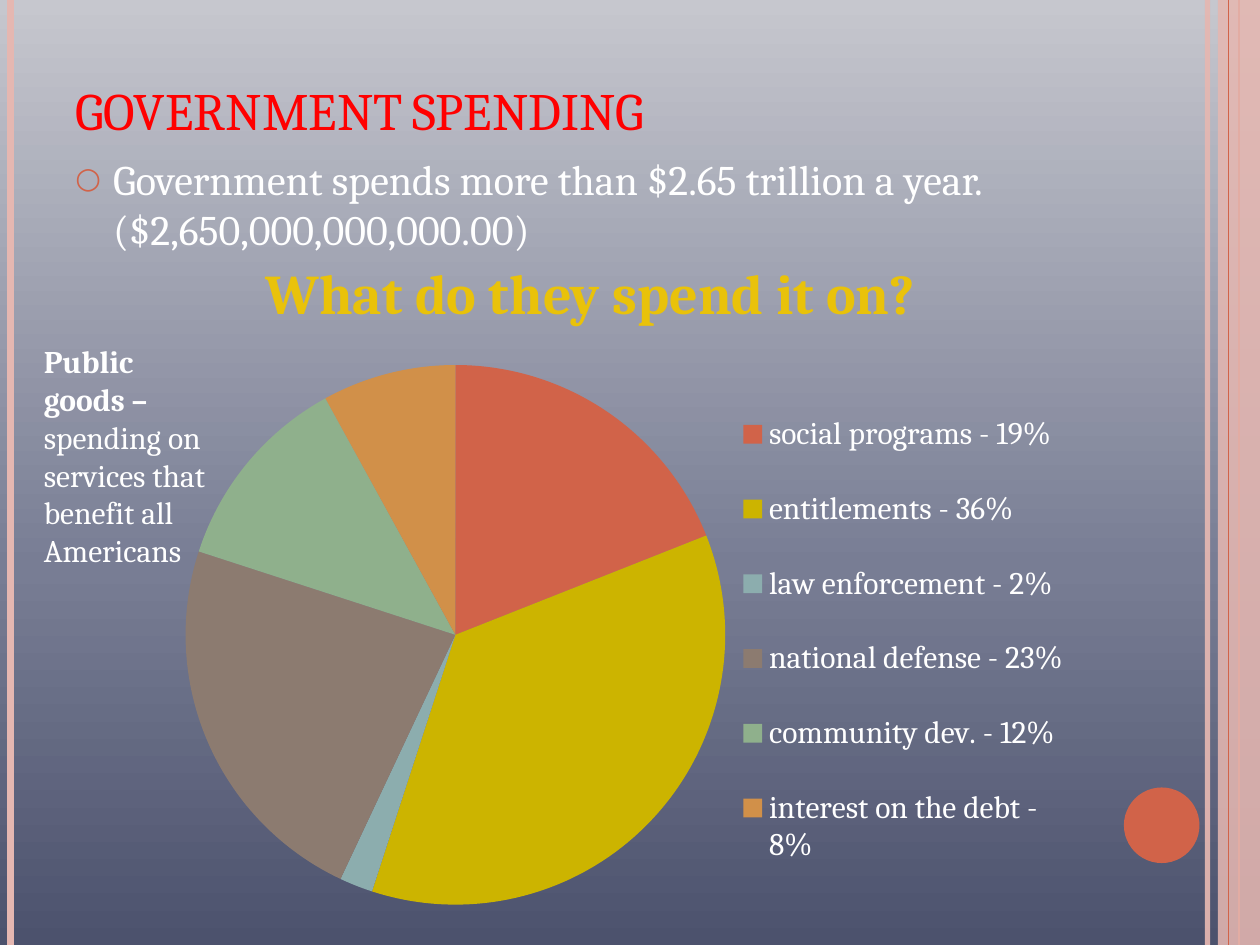
import pptx
import pptx.chart.data
import pptx.dml.color
import pptx.enum.chart
import pptx.enum.shapes
import pptx.enum.text
import pptx.oxml
import pptx.oxml.ns
import pptx.util

Pt = pptx.util.Pt
RGB = pptx.dml.color.RGBColor
Align = pptx.enum.text.PP_ALIGN
Fit = pptx.enum.text.MSO_AUTO_SIZE
Kind = pptx.enum.shapes.MSO_SHAPE

FONT = "Cambria"
WHITE = RGB(0xFF, 0xFF, 0xFF)
RED = RGB(0xFF, 0x00, 0x00)
GOLD = RGB(0xE9, 0xC2, 0x0A)
RUST = RGB(0xD1, 0x63, 0x49)
PINK = RGB(0xE5, 0xB7, 0xB1)
OLIVE = RGB(0xCC, 0xB4, 0x00)
TEAL = RGB(0x8C, 0xAD, 0xAE)
BROWN = RGB(0x8C, 0x7B, 0x70)
GREEN = RGB(0x8F, 0xB0, 0x8C)
AMBER = RGB(0xD1, 0x90, 0x49)

SKY = [(0, RGB(0x4C, 0x52, 0x6D)), (40, RGB(0x78, 0x7D, 0x94)),
       (100, RGB(0xC6, 0xC7, 0xCE))]
SHINE = [(0, RGB(0xFF, 0xE2, 0x75)), (75, GOLD), (100, RGB(0x97, 0x85, 0x00))]

WIDE, HIGH = 720, 540
TITLE = "GOVERNMENT SPENDING"
FACT = "Government spends more than $2.65 trillion a year. ($2,650,000,000,000.00)"
ASK = "What do they spend it on?"
GOODS = [("Public goods – ", True),
         ("spending on services that benefit all Americans", False)]
SHARES = [
    ("social programs", 19, RUST),
    ("entitlements", 36, OLIVE),
    ("law enforcement", 2, TEAL),
    ("national defense", 23, BROWN),
    ("community dev.", 12, GREEN),
    ("interest on the debt", 8, AMBER),
]
# left, top, width, height on the slide
CHART = (96, 186, 522, 354)
PIE = (106, 208.6, 308.4, 308.4)
KEY = (424, 216, 187, 299)
# x, width, colour, opacity in percent
RULES = [(690, 3, PINK, 93), (6, 4.5, PINK, 100), (708, 1.5, RUST, 100)]
EDGE = (702, 0.75, RUST, 100)


def pts(*nums):
    return [Pt(n) for n in nums]


def node(text):
    """Parse XML whose root tag carries the {ns} mark."""
    return pptx.oxml.parse_xml(text.replace("{ns}", pptx.oxml.ns.nsdecls("a", "c")))


def fade(solid, stops, angle):
    """Replace a solid fill element by a linear gradient."""
    marks = "".join(f'<a:gs pos="{at * 1000}"><a:srgbClr val="{tint}"/></a:gs>'
                    for at, tint in stops)
    solid.getparent().replace(solid, node(
        f'<a:gradFill {{ns}} rotWithShape="1"><a:gsLst>{marks}</a:gsLst>'
        f'<a:lin ang="{angle * 60000}" scaled="0"/></a:gradFill>'))


def veil(shape, part):
    """Set the opacity of a shape's colour."""
    for tint in shape.element.xpath("./p:spPr//a:srgbClr"):
        tint.append(node(f'<a:alpha {{ns}} val="{part * 1000}"/>'))


def add_rule(slide, x, width, color, part):
    rule = slide.shapes.add_connector(
        pptx.enum.shapes.MSO_CONNECTOR.STRAIGHT, *pts(x, 0, x, HIGH))
    rule.line.color.rgb = color
    rule.line.width = Pt(width)
    rule.element.spPr.append(node("<a:effectLst {ns}/>"))
    if part < 100:
        veil(rule, part)


def add_solid(slide, kind, box, color):
    shape = slide.shapes.add_shape(kind, *pts(*box))
    shape.shadow.inherit = False
    shape.fill.solid()
    shape.fill.fore_color.rgb = color
    shape.line.fill.background()
    return shape


def add_run(para, text, size, color, bold=False):
    run = para.add_run()
    run.text = text
    font = run.font
    font.name, font.size, font.bold = FONT, Pt(size), bold
    font.color.rgb = color
    return run


def add_text(slide, box, wrap=True, fit=Fit.NONE):
    frame = slide.shapes.add_textbox(*pts(*box)).text_frame
    frame.word_wrap = wrap
    frame.auto_size = fit
    return frame.paragraphs[0]


def add_frame(slide):
    """Background and the trim along both sides."""
    slide.background.fill.solid()
    fade(slide.element.xpath(".//p:bgPr/a:solidFill")[0], SKY, 270)
    for rule in RULES:
        add_rule(slide, *rule)
    veil(add_solid(slide, Kind.RECTANGLE, (696, 0, 24, HIGH), PINK), 87)
    add_rule(slide, *EDGE)
    add_solid(slide, Kind.OVAL, (642.25, 450, 43.2, 43.2), RUST)


def add_title(slide):
    title = slide.shapes.title
    title.left, title.top, title.width, title.height = pts(36, 21.6, 588, 62.6)
    frame = title.text_frame
    frame.vertical_anchor = pptx.enum.text.MSO_ANCHOR.BOTTOM
    para = frame.paragraphs[0]
    para.alignment = Align.LEFT
    run = add_run(para, TITLE, 30, RED)
    run._r.get_or_add_rPr().set("cap", "small")


def add_fact(slide):
    para = add_text(slide, (36, 84.2, 588, 425.5))
    para.space_before = Pt(6)
    add_run(para, FACT, 24, WHITE)
    props = para._p.get_or_add_pPr()
    props.set("marL", str(Pt(21.6)))
    props.set("indent", str(Pt(-21.6)))
    for mark in (f'<a:buClr {{ns}}><a:srgbClr val="{RUST}"/></a:buClr>',
                 '<a:buSzPct {ns} val="70000"/>',
                 f'<a:buFont {{ns}} typeface="{FONT}"/>',
                 '<a:buChar {ns} char="○"/>'):
        props.append(node(mark))


def layout(box, target=""):
    """Manual chart layout for a box given in slide points."""
    left, top, width, height = CHART
    parts = {"x": (box[0] - left) / width, "y": (box[1] - top) / height,
             "w": box[2] / width, "h": box[3] / height}
    modes = '<c:xMode val="edge"/><c:yMode val="edge"/>'
    sizes = "".join(f'<c:{key} val="{val:.4f}"/>' for key, val in parts.items())
    return node(f"<c:layout {{ns}}><c:manualLayout>{target}{modes}{sizes}"
                "</c:manualLayout></c:layout>")


def add_pie(slide):
    data = pptx.chart.data.CategoryChartData()
    data.categories = [f"{name} - {share}%" for name, share, _ in SHARES]
    data.add_series("Series 1", [share for _, share, _ in SHARES])
    chart = slide.shapes.add_chart(
        pptx.enum.chart.XL_CHART_TYPE.PIE, *pts(*CHART), data).chart
    chart.has_title = False
    chart.font.name, chart.font.size = FONT, Pt(18)
    chart.font.color.rgb = WHITE
    chart.has_legend = True
    chart.legend.position = pptx.enum.chart.XL_LEGEND_POSITION.RIGHT
    chart.legend.include_in_layout = False
    plot = chart.plots[0]
    plot.vary_by_categories = True
    for i, (_, _, color) in enumerate(SHARES):
        fill = plot.series[0].points[i].format.fill
        fill.solid()
        fill.fore_color.rgb = color

    root = chart.element
    for old in root.xpath(".//c:plotArea/c:layout | .//c:legend/c:layout"):
        old.getparent().remove(old)
    inner = '<c:layoutTarget val="inner"/>'
    root.xpath(".//c:plotArea")[0].insert(0, layout(PIE, inner))
    root.xpath(".//c:legendPos")[0].addnext(layout(KEY))


def main():
    deck = pptx.Presentation()
    deck.slide_width, deck.slide_height = pts(WIDE, HIGH)
    slide = deck.slides.add_slide(deck.slide_layouts[5])
    add_frame(slide)
    add_title(slide)
    add_fact(slide)

    ask = add_text(slide, (114, 144, 447, 46), False, Fit.SHAPE_TO_FIT_TEXT)
    ask.alignment = Align.CENTER
    run = add_run(ask, ASK, 32, GOLD, True)
    fade(run._r.xpath("./a:rPr/a:solidFill")[0], SHINE, 90)

    add_pie(slide)
    goods = add_text(slide, (18, 192, 108, 160), fit=Fit.SHAPE_TO_FIT_TEXT)
    for text, bold in GOODS:
        add_run(goods, text, 18, WHITE, bold)
    deck.save("out.pptx")


if __name__ == "__main__":
    main()
